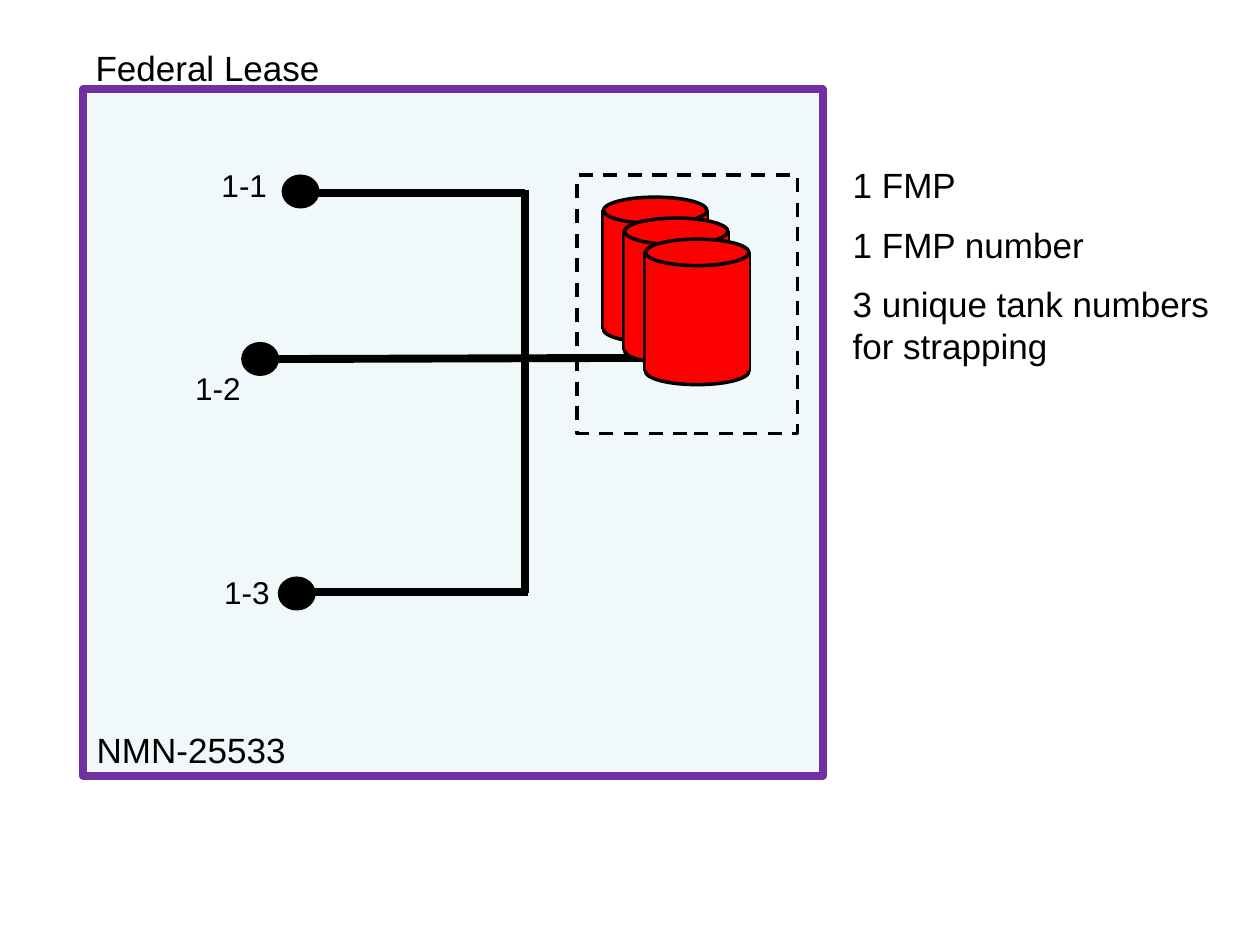
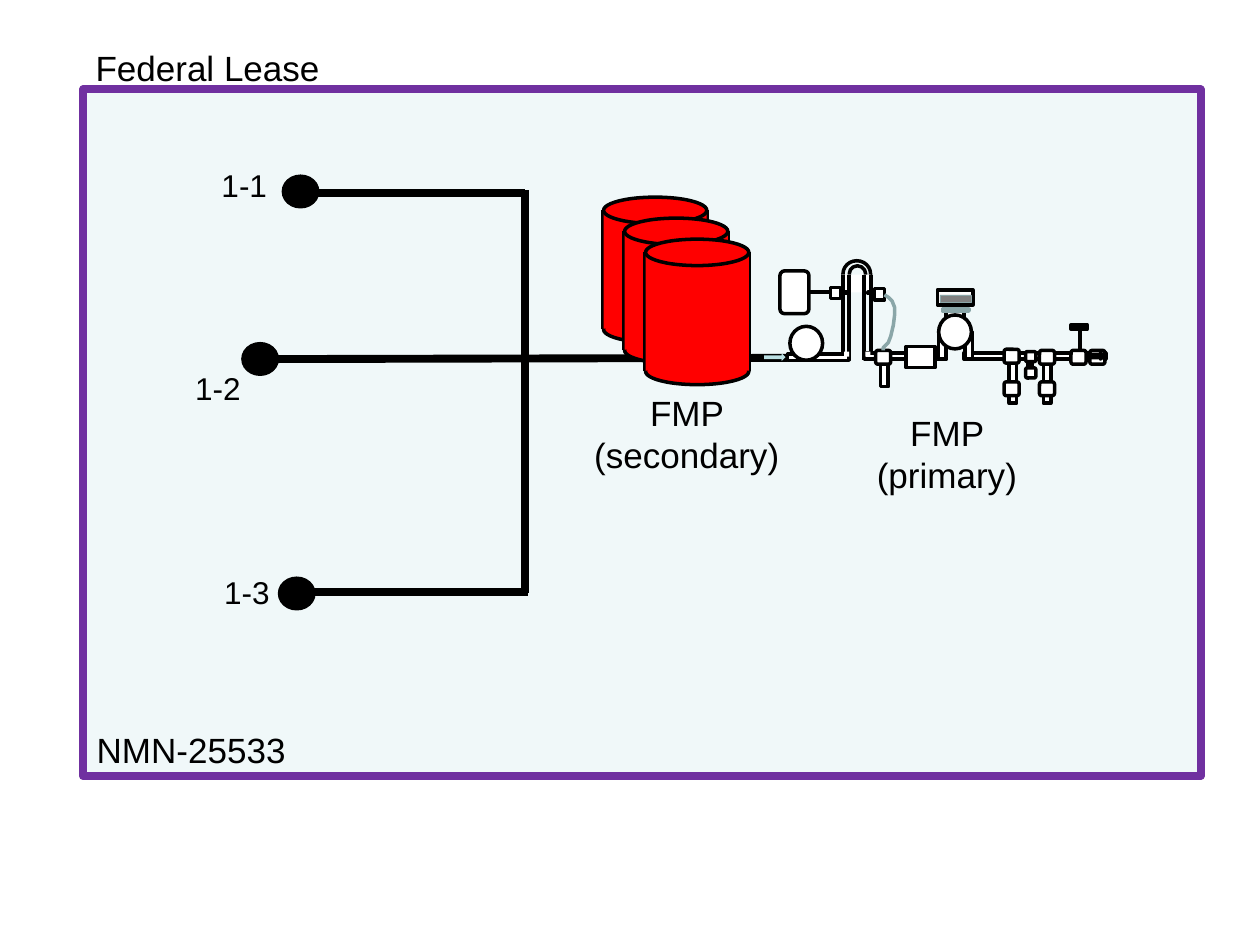
from dataclasses import dataclass
from typing import Optional, Union

from lxml import etree
from pptx import Presentation
from pptx import util as u
from pptx.dml import color
from pptx.enum import dml, shapes, text
from pptx.oxml import ns

Pt = u.Pt
FONT = "Arial"
COLORS = {
    "black": "000000",
    "white": "FFFFFF",
    "lease_fill": "F0F8F9",
    "lease_edge": "7030A0",
    "tank": "FF0000",
    "cable": "8AA6A8",
    "display": "808080",
    "flow": "BBE0E3",
}
RECT = shapes.MSO_SHAPE.RECTANGLE
ROUND = shapes.MSO_SHAPE.ROUNDED_RECTANGLE
OVAL = shapes.MSO_SHAPE.OVAL
ARROW = shapes.MSO_SHAPE.RIGHT_ARROW


@dataclass(frozen=True)
class Part:
    kind: shapes.MSO_SHAPE
    x: float
    y: float
    w: float
    h: float
    fill: Optional[str] = "white"
    line: Optional[str] = "black"
    weight: float = 2
    dashed: bool = False


@dataclass(frozen=True)
class Pipe:
    x1: float
    y1: float
    x2: float
    y2: float
    weight: float = 4.5


@dataclass(frozen=True)
class Cable:
    points: tuple[tuple[float, float], ...]
    line: str = "cable"
    weight: float = 2


@dataclass(frozen=True)
class Label:
    lines: tuple[str, ...]
    x: float
    y: float
    w: float
    h: float
    size: float = 20
    align: text.PP_ALIGN = text.PP_ALIGN.LEFT


@dataclass(frozen=True)
class Well:
    name: str
    x: float
    y: float
    label_x: float
    label_y: float


Item = Union[Part, Pipe, Cable]

WELLS = (
    Well("1-3", 159.1, 329.8, 121, 324),
    Well("1-1", 161.3, 100.1, 119.5, 91.4),
    Well("1-2", 138.2, 195.8, 104.4, 207.4),
)
CAPTIONS = (
    Label(("NMN-25533",), 48.2, 412.6, 131.8, 31.7),
    Label(("Federal Lease",), 47.5, 23, 173.5, 31.7),
)
NOTES = Label(
    ("1 FMP", "1 FMP number", "3 unique tank numbers for strapping"),
    480.2, 90, 228.2, 128.2,
)
PRIMARY = Label(("FMP (primary)",), 492.5, 231.8, 97.2, 55.4,
                align=text.PP_ALIGN.CENTER)
SECONDARY = Label(("FMP (secondary)",), 322.6, 220.3, 139.7, 55.4,
                  align=text.PP_ALIGN.CENTER)
BATTERY_BOUNDARY = Part(RECT, 329.8, 100.1, 126, 147.6, None, dashed=True)


def rgb(name: str) -> color.RGBColor:
    return color.RGBColor.from_string(COLORS[name])


def draw_part(canvas, part: Part) -> None:
    sp = canvas.add_shape(part.kind, Pt(part.x), Pt(part.y), Pt(part.w), Pt(part.h))
    style(sp, part.fill, part.line, part.weight)
    if part.dashed:
        sp.line.dash_style = dml.MSO_LINE.DASH


def style(sp, fill: Optional[str], line: Optional[str], weight: float) -> None:
    sp.shadow.inherit = False
    if fill:
        sp.fill.solid()
        sp.fill.fore_color.rgb = rgb(fill)
    else:
        sp.fill.background()
    if line:
        sp.line.color.rgb = rgb(line)
        sp.line.width = Pt(weight)
    else:
        sp.line.fill.background()


def draw_pipe(canvas, pipe: Pipe) -> None:
    c = canvas.add_connector(shapes.MSO_CONNECTOR.STRAIGHT, Pt(pipe.x1),
                             Pt(pipe.y1), Pt(pipe.x2), Pt(pipe.y2))
    c.line.color.rgb = rgb("black")
    c.line.width = Pt(pipe.weight)
    etree.SubElement(c._element.spPr, ns.qn("a:effectLst"))


def draw_cable(canvas, cable: Cable) -> None:
    points = [(Pt(x), Pt(y)) for x, y in cable.points]
    fb = canvas.build_freeform(*points[0])
    fb.add_line_segments(points[1:], close=False)
    style(fb.convert_to_shape(), None, cable.line, cable.weight)


def draw_items(canvas, items: list[Item]) -> None:
    draw = {Part: draw_part, Pipe: draw_pipe, Cable: draw_cable}
    for item in items:
        draw[type(item)](canvas, item)


def draw_label(s, label: Label) -> None:
    box = s.shapes.add_textbox(Pt(label.x), Pt(label.y), Pt(label.w), Pt(label.h))
    tf = box.text_frame
    tf.word_wrap = True
    tf.auto_size = text.MSO_AUTO_SIZE.SHAPE_TO_FIT_TEXT
    tf.text = "\n".join(label.lines)
    for i, p in enumerate(tf.paragraphs):
        p.alignment = label.align
        p.space_before = Pt(label.size / 2 if i else 0)
        for r in p.runs:
            r.font.name = FONT
            r.font.size = Pt(label.size)
            r.font.color.rgb = rgb("black")


def draw_lease(s, width: float, trunk_end: float) -> None:
    draw_part(s.shapes, Part(RECT, 47.5, 51.1, width, 392.4,
                             "lease_fill", "lease_edge", 4.5))
    for well in WELLS:
        draw_part(s.shapes, Part(OVAL, well.x, well.y, 20.9, 18.7, "black", weight=0.75))
        draw_label(s, Label((well.name,), well.label_x, well.label_y, 50.4, 28.8, 18))
    for caption in CAPTIONS:
        draw_label(s, caption)
    draw_items(s.shapes, [
        Pipe(169.9, 110.2, 300.2, 110.2),
        Pipe(149, 205.2, trunk_end, 204.5),
        Pipe(171.4, 338.4, 301.7, 338.4),
        Pipe(300.2, 339.1, 300.2, 108.7),
    ])


def draw_tanks(s, count: int = 3, step: float = 12) -> None:
    width, cap, body = 59, 15.1, 67.7
    for i in range(count):
        x, y = 344.9 + i * step, 120.2 + i * step
        draw_items(s.shapes.add_group_shape().shapes, [
            Part(RECT, x, y + 55.5, width, 12.2, "tank", None),
            Pipe(x, y, x, y + body, 3),
            Pipe(x + width, y, x + width, y + body, 3),
            Part(OVAL, x, y + 60.5, width, cap, "tank"),
            Part(RECT, x, y, width, body, "tank", None),
            Part(OVAL, x, y - cap / 2, width, cap, "tank"),
        ])


def fitting(x: float, y: float = 200.2) -> Part:
    return Part(ROUND, x, y, 8.6, 7.9)


def coupling(x: float, y: float) -> Part:
    return Part(ROUND, x, y, 5.8, 5.8)


def patch(x: float, y: float) -> Part:
    return Part(RECT, x, y, 2.9, 2.9, line=None)


def meter_items() -> list[Item]:
    loop = [
        Part(OVAL, 481.7, 149, 15.8, 15.1, None),
        Part(OVAL, 485.3, 151.9, 9.4, 9.4, None),
        Part(RECT, 481, 157, 16.6, 10.1, line=None),
        *(Pipe(x, 157, x, 205.9, 2.25) for x in (481.7, 485.3, 493.9, 497.5)),
        Part(OVAL, 458.6, 202.3, 3.6, 3.6),
        Part(RECT, 460.8, 202.3, 1.4, 2.9, line=None),
        Part(RECT, 493.9, 201.6, 46.8, 3.6),
    ]
    sampler = [
        Part(ROUND, 445.7, 154.8, 16.6, 24.5),
        Part(RECT, 478.1, 167, 5.8, 0.7),
        Pipe(478.1, 167, 462.2, 167, 2.25),
        Part(RECT, 496.1, 167, 5.8, 0.7),
        Part(RECT, 499.7, 164.9, 5.8, 6.5),
        Part(RECT, 503.3, 205.2, 4.3, 15.8),
        fitting(500.4),
        Cable(((505.4, 168.5), (507.6, 169.9), (509.8, 172.1), (511.2, 175.7),
               (511.2, 180), (510.5, 185.8), (509, 192.2), (507.6, 195.8),
               (504.7, 198.7), (504.7, 200.2))),
    ]
    pump = [
        Part(RECT, 450, 202.3, 35.3, 3.6),
        Part(OVAL, 451.4, 186.5, 18.7, 19.4),
        patch(482.4, 200.9), patch(494.6, 200.9), patch(535, 202.3),
    ]
    outlet = [
        Part(RECT, 550.8, 201.6, 81.4, 3.6),
        *(Part(RECT, x, 205.2, 4.3, 25.2) for x in (576.7, 596.2)),
        fitting(594), fitting(573.8, 199.6),
        Part(RECT, 587.5, 205.2, 2.2, 6.5),
    ]
    register = [
        Part(RECT, 535.7, 165.6, 20.2, 8.6),
        Part(RECT, 540.7, 175, 10.1, 7.9),
        *(Part(RECT, x, 189.4, 4.3, 15.8) for x in (536.4, 551.5)),
        Part(OVAL, 536.4, 180, 18.7, 19.4),
        Part(RECT, 538.6, 176.4, 15.1, 1.4, line="cable"),
        Part(RECT, 537.1, 168.5, 18, 4.3, "display", "cable", 0.25),
    ]
    valves = [
        fitting(612),
        Pipe(617, 200.2, 617, 188.6, 2.25),
        Part(RECT, 612, 185.8, 9.4, 2.2),
        coupling(586.1, 210.2),
        fitting(594, 218.2), fitting(573.8, 218.2),
        coupling(586.1, 200.9),
        Part(RECT, 517.7, 198, 16.6, 12.2),
        Part(ARROW, 436.7, 202, 12.2, 4.3, "flow", None),
        Part(RECT, 474.5, 164.2, 5.8, 6.5),
        fitting(622.8),
        Part(ARROW, 623.5, 201.6, 7.2, 3.6),
    ]
    return loop + sampler + pump + outlet + register + valves


def tank_slide(prs) -> None:
    s = prs.slides.add_slide(prs.slide_layouts[6])
    draw_lease(s, 422.6, 373)
    draw_tanks(s)
    draw_part(s.shapes, BATTERY_BOUNDARY)
    draw_label(s, NOTES)


def meter_slide(prs) -> None:
    s = prs.slides.add_slide(prs.slide_layouts[6])
    draw_lease(s, 638.6, 450)
    draw_label(s, PRIMARY)
    draw_items(s.shapes.add_group_shape().shapes, meter_items())
    draw_tanks(s)
    draw_label(s, SECONDARY)


def main() -> None:
    prs = Presentation()
    prs.slide_width, prs.slide_height = Pt(720), Pt(540)
    tank_slide(prs)
    meter_slide(prs)
    prs.save("out.pptx")


if __name__ == "__main__":
    main()
